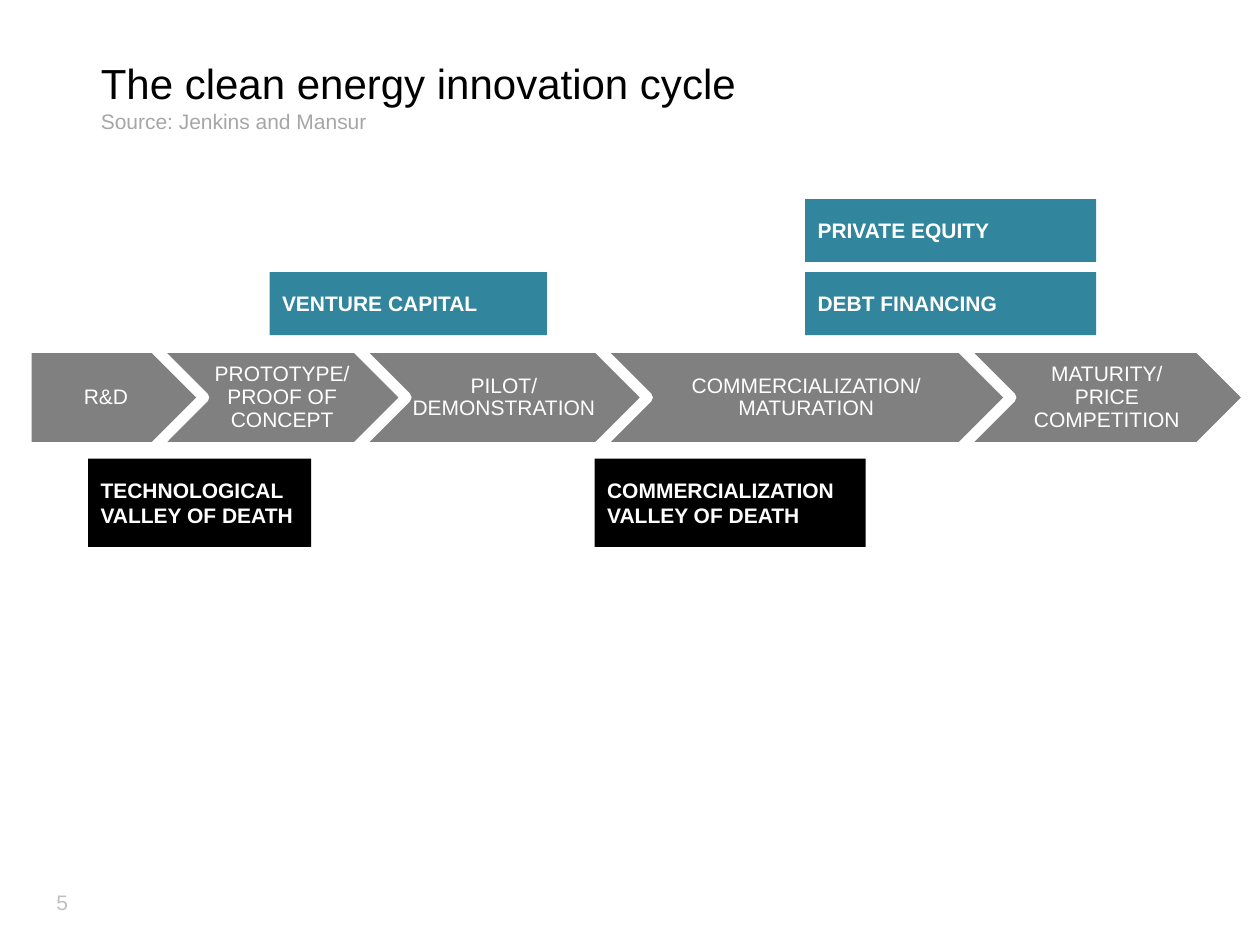
from lxml import etree
from pptx import Presentation
from pptx.dml.color import RGBColor
from pptx.enum.shapes import MSO_SHAPE
from pptx.enum.text import MSO_ANCHOR, MSO_AUTO_SIZE, PP_ALIGN
from pptx.oxml.ns import qn
from pptx.util import Inches, Pt

# Content
TITLE = [("The clean energy innovation cycle", 24, "title"),
         ("Source: Jenkins and Mansur", 12, "source")]
# text, width, left and right inset (the long word DEMONSTRATION needs the room)
STAGES = [("R&D", 1.41, 0.07, 0.02),
          ("PROTOTYPE/ PROOF OF CONCEPT", 2.0, 0.05, 0.02),
          ("PILOT/ DEMONSTRATION", 2.31, 0.03, 0),
          ("COMMERCIALIZATION/ MATURATION", 3.28, 0.05, 0.02),
          ("MATURITY/ PRICE COMPETITION", 2.28, 0.05, 0.02)]
# text, left, top, width, height, fill
BOXES = [("VENTURE CAPITAL", 2.14, 2.16, 2.2, 0.5, "finance"),
         ("DEBT FINANCING", 6.39, 2.16, 2.31, 0.5, "finance"),
         ("PRIVATE EQUITY", 6.39, 1.58, 2.31, 0.5, "finance"),
         ("TECHNOLOGICAL\nVALLEY OF DEATH", 0.7, 3.64, 1.77, 0.7, "valley"),
         ("COMMERCIALIZATION\nVALLEY OF DEATH", 4.72, 3.64, 2.15, 0.7, "valley")]
PAGE = "5"

COLORS = {"title": "000000", "source": "A6A6A6", "stage": "808080",
          "finance": "31859C", "valley": "000000", "white": "FFFFFF",
          "page": "BFBFBF"}
CHAIN_LEFT, CHAIN_TOP, CHAIN_HEIGHT = 0.21, 2.76, 0.79
OVERLAP = CHAIN_HEIGHT / 2  # each point fits into the next notch


def rgb(name):
    return RGBColor.from_string(COLORS[name])


def format_paragraph(p, size, color, bold=False, align=PP_ALIGN.LEFT):
    p.alignment = align
    for r in p.runs:
        r.font.name = "Arial"
        r.font.size = Pt(size)
        r.font.bold = bold
        r.font.color.rgb = rgb(color)


def add_block(s, kind, text, box, fill, bold=False, align=PP_ALIGN.LEFT):
    sp = s.shapes.add_shape(kind, *map(Inches, box))
    sp.shadow.inherit = False
    sp.fill.solid()
    sp.fill.fore_color.rgb = rgb(fill)
    sp.line.fill.background()
    tf = sp.text_frame
    tf.text = text
    tf.word_wrap = True
    tf.vertical_anchor = MSO_ANCHOR.MIDDLE
    for p in tf.paragraphs:
        format_paragraph(p, 12, "white", bold, align)
    return sp


prs = Presentation()
prs.slide_width, prs.slide_height = Inches(10), Inches(7.5)
s = prs.slides.add_slide(prs.slide_layouts[5])

# Title and source
title = s.shapes.title
title.left, title.top, title.width, title.height = map(Inches, (0.7, 0.41, 6.36, 0.71))
tf = title.text_frame
tf.text = "\n".join(text for text, _, _ in TITLE)
tf.auto_size = MSO_AUTO_SIZE.NONE
tf.vertical_anchor = MSO_ANCHOR.TOP
for p, (_, size, color) in zip(tf.paragraphs, TITLE):
    format_paragraph(p, size, color)

# Chain of stages
left = CHAIN_LEFT
for i, (text, width, inset_left, inset_right) in enumerate(STAGES):
    kind = MSO_SHAPE.CHEVRON if i else MSO_SHAPE.PENTAGON
    sp = add_block(s, kind, text, (left, CHAIN_TOP, width, CHAIN_HEIGHT),
                   "stage", align=PP_ALIGN.CENTER)
    sp.line.color.rgb = rgb("white")
    sp.line.width = Pt(6)
    etree.SubElement(sp.element.spPr.find(qn("a:ln")), qn("a:round"))
    tf = sp.text_frame
    tf.margin_left, tf.margin_right = Inches(inset_left), Inches(inset_right)
    tf.margin_top = tf.margin_bottom = Inches(0.04)
    tf.paragraphs[0].line_spacing = 0.9
    left += width - OVERLAP

# Financing sources and valleys of death
for text, x, y, w, h, fill in BOXES:
    add_block(s, MSO_SHAPE.RECTANGLE, text, (x, y, w, h), fill, bold=True)

# Page number
page = s.shapes.add_textbox(*map(Inches, (0.35, 6.96, 0.54, 0.4)))
tf = page.text_frame
tf.text = PAGE
tf.word_wrap = True
tf.vertical_anchor = MSO_ANCHOR.MIDDLE
format_paragraph(tf.paragraphs[0], 12, "page")

prs.save("out.pptx")
